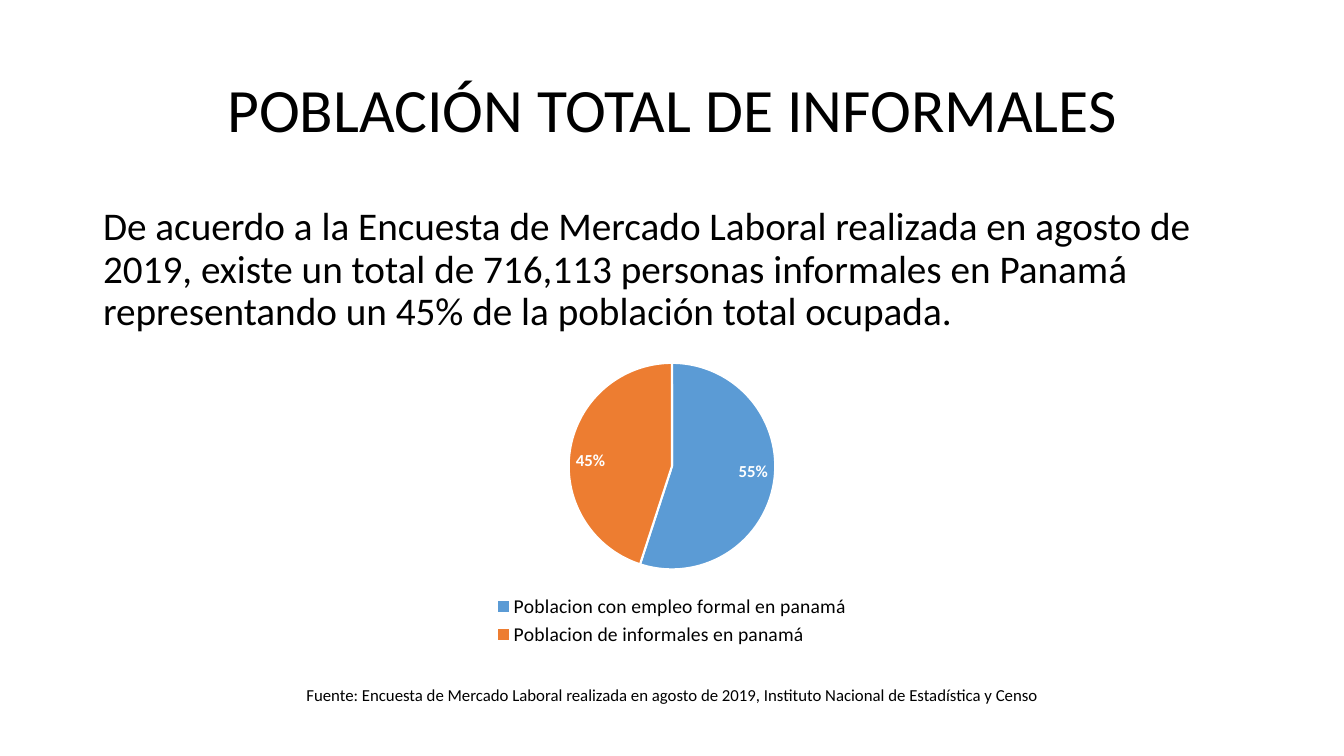
from pptx import Presentation
from pptx import util as u
from pptx.chart.data import CategoryChartData
from pptx.dml.color import RGBColor
from pptx.enum import chart as ch, text

PX = u.Inches(1) / 100.8
C = {"text": "000000", "white": "FFFFFF", "formal": "5B9BD5", "informal": "ED7D31"}


def place(sp, *box):
    for name, px in zip(("left", "top", "width", "height"), box):
        setattr(sp, name, round(px * PX))


def style(font, size, color="text", bold=False):
    for name, value in {"name": "Calibri", "size": u.Pt(size), "bold": bold}.items():
        setattr(font, name, value)
    font.color.rgb = RGBColor.from_string(C[color])


prs = Presentation()
prs.slide_width, prs.slide_height = round(1344 * PX), round(756 * PX)
s = prs.slides.add_slide(prs.slide_layouts[1])
title, body = s.placeholders
source = s.shapes.add_textbox(0, 0, 0, 0)

# Title, paragraph and source line
left, center = text.PP_ALIGN.LEFT, text.PP_ALIGN.CENTER
top, middle = text.MSO_ANCHOR.TOP, text.MSO_ANCHOR.MIDDLE
for sp, box, size, anchor, fmt, words in (
    (title, (93, 40, 1159, 146), 44, middle,
     {"alignment": center, "line_spacing": 0.9},
     "POBLACIÓN TOTAL DE INFORMALES"),
    (body, (93, 202, 1159, 480), 28, top,
     {"alignment": left, "line_spacing": 0.9, "space_before": u.Pt(10)},
     "De acuerdo a la Encuesta de Mercado Laboral realizada en agosto de 2019, "
     "existe un total de 716,113 personas informales en Panamá "
     "representando un 45% de la población total ocupada."),
    (source, (295, 680, 755, 30), 12, top,
     {"alignment": center},
     "Fuente: Encuesta de Mercado Laboral realizada en agosto de 2019, "
     "Instituto Nacional de Estadística y Censo"),
):
    place(sp, *box)
    tf = sp.text_frame
    tf.word_wrap = True
    tf.auto_size = text.MSO_AUTO_SIZE.NONE
    tf.vertical_anchor = anchor
    p = tf.paragraphs[0]
    for name, value in fmt.items():
        setattr(p, name, value)
    r = p.add_run()
    r.text = words
    style(r.font, size)

# The paragraph has no bullet
pPr = body.text_frame.paragraphs[0]._p.get_or_add_pPr()
pPr.set("marL", "0")
pPr.set("indent", "0")
pPr.add_child = pPr.makeelement(
    "{http://schemas.openxmlformats.org/drawingml/2006/main}buNone", {})
pPr.append(pPr.add_child)

# Pie of formal and informal workers
data = CategoryChartData()
data.categories = ["Poblacion con empleo formal en panamá",
                   "Poblacion de informales en panamá"]
data.add_series("Series 1", (55, 45))
frame = s.shapes.add_chart(ch.XL_CHART_TYPE.PIE, 0, 0, 1, 1, data)
place(frame, 420, 349, 504, 302)
chart = frame.chart
chart.has_title = False
style(chart.font, 10)
chart.has_legend = True
chart.legend.position = ch.XL_LEGEND_POSITION.BOTTOM
chart.legend.include_in_layout = False
style(chart.legend.font, 14)

plot = chart.plots[0]
plot.vary_by_categories = True
for i, key in enumerate(("formal", "informal")):
    fmt = plot.series[0].points[i].format
    fmt.fill.solid()
    fmt.fill.fore_color.rgb = RGBColor.from_string(C[key])
    fmt.line.color.rgb = RGBColor.from_string(C["white"])
    fmt.line.width = u.Pt(1.5)

plot.has_data_labels = True
labels = plot.data_labels
for name, value in {"show_percentage": True, "show_value": False,
                    "number_format": "0%", "number_format_is_linked": False,
                    "position": ch.XL_LABEL_POSITION.INSIDE_END}.items():
    setattr(labels, name, value)
style(labels.font, 12, "white", True)

prs.save("out.pptx")
